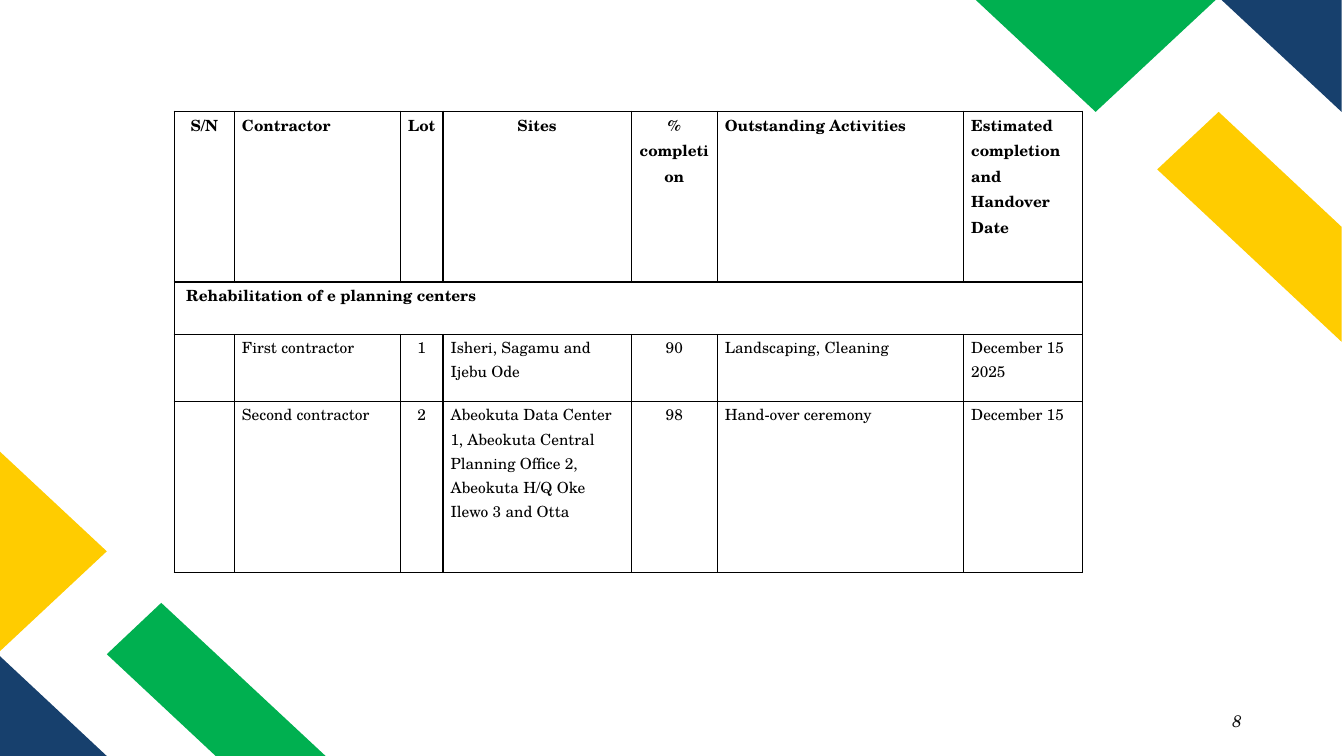
from lxml import etree
from pptx import Presentation
from pptx.dml.color import RGBColor
from pptx.enum.text import MSO_ANCHOR, PP_ALIGN
from pptx.oxml.ns import qn
from pptx.util import Pt

LEFT, CENTER, RIGHT = PP_ALIGN.LEFT, PP_ALIGN.CENTER, PP_ALIGN.RIGHT
MIDDLE = MSO_ANCHOR.MIDDLE
FONT = "TeX Gyre Schola"
COLORS = {
    "green": "00B050",
    "navy": "17406D",
    "yellow": "FFCC00",
    "black": "000000",
    "number": "0D0D0D",
}

DECORATIONS = [
    ("green", [(232.6, 540), (154.1, 540), (76.3, 467.3), (115.2, 430.6)]),
    ("navy", [(76.3, 540), (0, 540), (0, 468.7)]),
    ("yellow", [(0, 322.6), (76.3, 393.8), (0, 465.1)]),
    ("yellow", [(958.3, 244.1), (958.3, 162), (870.5, 79.9), (826.6, 121)]),
    ("navy", [(958.3, 79.9), (958.3, 0), (872.6, 0)]),
    ("green", [(697, 0), (782.6, 79.9), (868.3, 0)]),
]

COLUMN_WIDTHS = [43, 118.5, 30.5, 134.5, 61.5, 176, 85]
ROW_HEIGHTS = [122, 37.5, 48, 122]
CENTERED_COLUMNS = (0, 2, 4)
SITES_COLUMN = 3
HEADERS = ["S/N", "Contractor", "Lot", "Sites", "% completion",
           "Outstanding Activities",
           "Estimated completion and Handover Date"]
SECTION = "Rehabilitation of e planning centers"
CONTRACTS = [
    ["", "First contractor", "1", "Isheri, Sagamu and Ijebu Ode", "90",
     "Landscaping, Cleaning", "December 15 2025"],
    ["", "Second contractor", "2",
     "Abeokuta Data Center 1, Abeokuta Central Planning Office 2, "
     "Abeokuta H/Q Oke Ilewo 3 and Otta", "98",
     "Hand-over ceremony", "December 15"],
]


def rgb(name):
    return RGBColor.from_string(COLORS[name])


def style_paragraph(p, size, color, align, bold=False, italic=False):
    p.alignment = align
    p.font.name = FONT
    p.font.size = Pt(size)
    p.font.bold = bold
    p.font.italic = italic
    p.font.color.rgb = rgb(color)


def add_polygon(slide, color, points):
    vertices = [(Pt(x), Pt(y)) for x, y in points]
    builder = slide.shapes.build_freeform(*vertices[0])
    builder.add_line_segments(vertices[1:], close=True)
    sp = builder.convert_to_shape()
    sp.shadow.inherit = False
    sp.fill.solid()
    sp.fill.fore_color.rgb = rgb(color)
    sp.line.fill.background()


def add_page_number(slide, number):
    sp = slide.shapes.add_textbox(Pt(678), Pt(500.5), Pt(216), Pt(29))
    tf = sp.text_frame
    tf.word_wrap = True
    tf.vertical_anchor = MIDDLE
    p = tf.paragraphs[0]
    p.text = number
    style_paragraph(p, 12, "number", RIGHT, italic=True)


def set_borders(cell):
    tc_pr = cell._tc.get_or_add_tcPr()
    for side in ("a:lnL", "a:lnR", "a:lnT", "a:lnB"):
        ln = etree.SubElement(tc_pr, qn(side), w=str(Pt(1)))
        fill = etree.SubElement(ln, qn("a:solidFill"))
        etree.SubElement(fill, qn("a:srgbClr"), val=COLORS["black"])


def fill_cell(cell, text, align, bold):
    set_borders(cell)
    cell.fill.background()
    cell.margin_left = cell.margin_right = Pt(5.4)
    cell.margin_top = cell.margin_bottom = Pt(0)
    p = cell.text_frame.paragraphs[0]
    p.text = text
    p.line_spacing = 1.07
    style_paragraph(p, 11, "black", align, bold)


def add_contract_table(slide):
    rows = [HEADERS, [SECTION] + [""] * (len(HEADERS) - 1), *CONTRACTS]
    frame = slide.shapes.add_table(
        len(rows), len(HEADERS), Pt(124.5), Pt(79.5),
        Pt(sum(COLUMN_WIDTHS)), Pt(sum(ROW_HEIGHTS)))
    table = frame.table
    for column, width in zip(table.columns, COLUMN_WIDTHS):
        column.width = Pt(width)
    for row, height in zip(table.rows, ROW_HEIGHTS):
        row.height = Pt(height)
    for i, values in enumerate(rows):
        for j, text in enumerate(values):
            centered = i != 1 and (
                j in CENTERED_COLUMNS or (i == 0 and j == SITES_COLUMN))
            fill_cell(table.cell(i, j), text,
                      CENTER if centered else LEFT, bold=i < 2)
    section = table.cell(1, 0)
    section.merge(table.cell(1, len(HEADERS) - 1))
    section.margin_left = Pt(8.4)


def main():
    prs = Presentation()
    prs.slide_width, prs.slide_height = Pt(960), Pt(540)
    slide = prs.slides.add_slide(prs.slide_layouts[6])
    for color, points in DECORATIONS:
        add_polygon(slide, color, points)
    add_page_number(slide, "8")
    add_contract_table(slide)
    prs.save("out.pptx")


if __name__ == "__main__":
    main()
